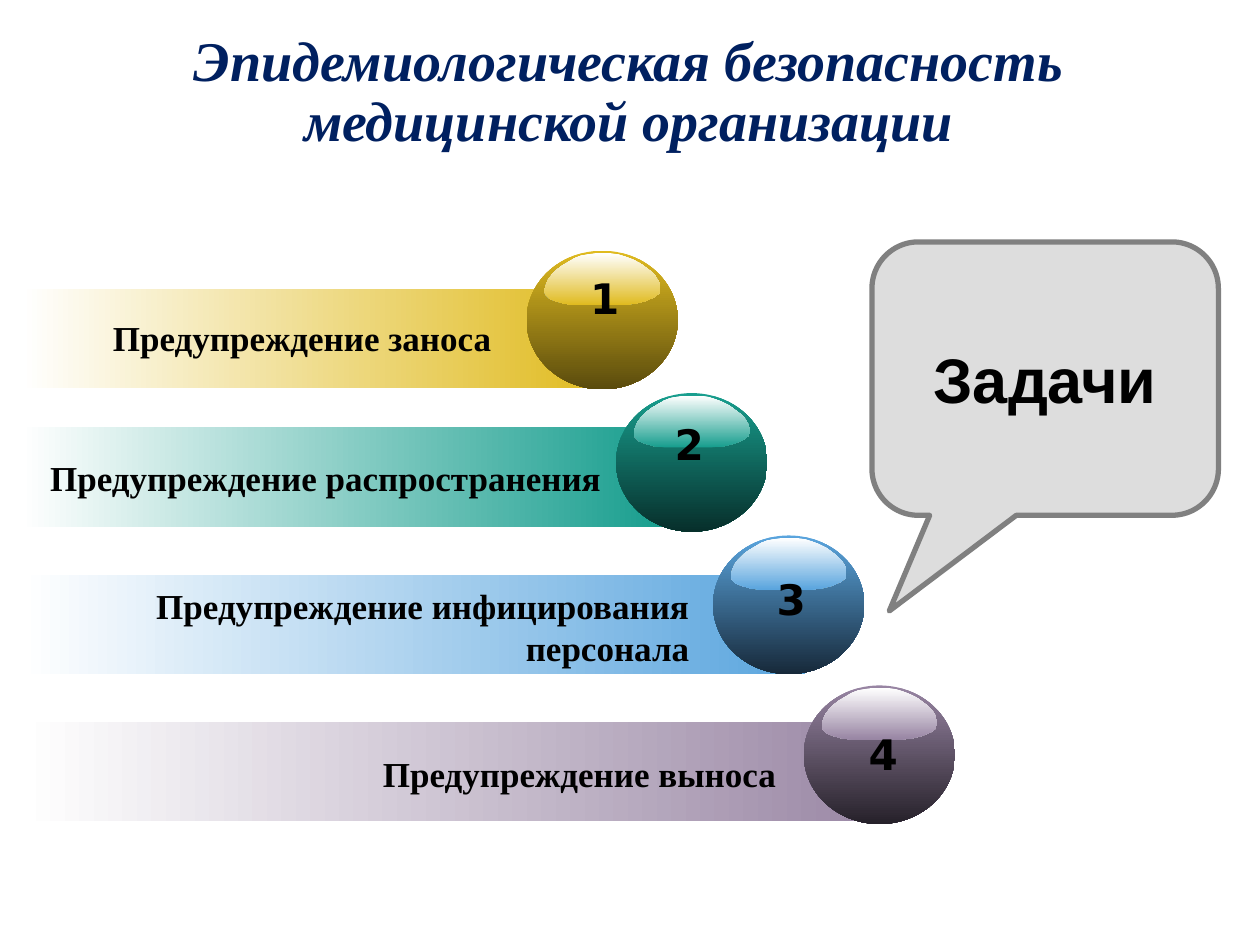
from dataclasses import dataclass
from pptx import Presentation
from pptx.dml.color import RGBColor
from pptx.enum.shapes import MSO_SHAPE
from pptx.enum.text import MSO_ANCHOR, MSO_AUTO_SIZE, PP_ALIGN
from pptx.util import Inches, Pt

RECT, OVAL = MSO_SHAPE.RECTANGLE, MSO_SHAPE.OVAL
CALLOUT = MSO_SHAPE.ROUNDED_RECTANGULAR_CALLOUT
MIDDLE = MSO_ANCHOR.MIDDLE
CENTER, RIGHT = PP_ALIGN.CENTER, PP_ALIGN.RIGHT
GROW = MSO_AUTO_SIZE.SHAPE_TO_FIT_TEXT
RIGHTWARD, DOWNWARD = 0, 270


@dataclass(frozen=True)
class Theme:
    white: str = "FFFFFF"
    black: str = "000000"
    navy: str = "002060"
    callout_fill: str = "DDDDDD"
    callout_line: str = "808080"
    serif: str = "Times New Roman"
    sans: str = "Arial"
    digits: str = "DejaVu Sans"
    task_size: int = 20
    number_size: int = 24
    title_size: int = 32
    callout_size: int = 36


theme = Theme()


def write(shape, text, align, font, size, color=theme.black, **formats):
    """Fill a shape with one bold paragraph; formats are paragraph attributes."""
    paragraph = shape.text_frame.paragraphs[0]
    paragraph.alignment = align
    for key, value in formats.items():
        setattr(paragraph, key, value)
    run = paragraph.add_run()
    run.text = text
    for key, value in {"name": font, "size": Pt(size), "bold": True}.items():
        setattr(run.font, key, value)
    run.font.color.rgb = RGBColor.from_string(color)
    return run


def paint(shape, start, end, angle):
    """Give a shape a two-colour gradient without outline or shadow."""
    shape.shadow.inherit = False
    shape.line.fill.background()
    shape.fill.gradient()
    shape.fill.gradient_angle = angle
    for stop, color in zip(shape.fill.gradient_stops, (start, end)):
        stop.color.rgb = RGBColor.from_string(color)


prs = Presentation()
prs.slide_width, prs.slide_height = Inches(10), Inches(7.5)
slide = prs.slides.add_slide(prs.slide_layouts[6])

# Highlight outline in hundredths of an inch from its own top left corner
GLOSS = [(91, 23), (92, 28), (91, 32), (87, 35), (80, 38), (72, 40), (62, 41),
         (55, 41), (33, 41), (24, 41), (16, 40), (9, 38), (4, 36), (1, 33),
         (0, 30), (1, 26), (3, 21), (6, 17), (10, 13), (14, 10), (19, 7),
         (24, 4), (29, 2), (34, 1), (40, 0), (46, 0), (53, 0), (59, 1),
         (65, 3), (70, 5), (76, 8), (80, 11), (84, 14), (88, 18)]
BAR_LEFT, BAR_HEIGHT = 0.17, 0.79
BALL_WIDTH, BALL_HEIGHT = 1.2, 1.1

# number, colour, shade, bar top, bar width, ball left, ball top, digit left, digit top
tasks = [
    ("4", "9885A3", "26212A", 5.73, 6.99, 6.38, 5.44, 6.79, 5.73),
    ("2", "189E8E", "072F2B", 3.39, 5.10, 4.89, 3.12, 5.25, 3.27),
    ("3", "5AA5DE", "17293A", 4.56, 6.22, 5.66, 4.25, 6.06, 4.50),
    ("1", "E0BB20", "5A4B0D", 2.29, 4.62, 4.18, 1.99, 4.58, 2.11),
]
for number, color, shade, bar_top, bar_width, ball_left, ball_top, digit_left, digit_top in tasks:
    task = slide.shapes.add_group_shape().shapes
    bar = task.add_shape(RECT, Inches(BAR_LEFT), Inches(bar_top),
                         Inches(bar_width), Inches(BAR_HEIGHT))
    paint(bar, theme.white, color, RIGHTWARD)
    ball = task.add_shape(OVAL, Inches(ball_left), Inches(ball_top),
                          Inches(BALL_WIDTH), Inches(BALL_HEIGHT))
    paint(ball, color, shade, DOWNWARD)
    outline = task.build_freeform(*GLOSS[0], scale=Inches(0.01))
    outline.add_line_segments(GLOSS[1:], close=True)
    gloss = outline.convert_to_shape(Inches(ball_left + 0.14), Inches(ball_top + 0.02))
    paint(gloss, theme.white, color, DOWNWARD)
    digit = task.add_textbox(Inches(digit_left), Inches(digit_top), Inches(0.44), Inches(0.5))
    digit.text_frame.word_wrap = False
    digit.text_frame.auto_size = GROW
    write(digit, number, CENTER, theme.digits, theme.number_size)

captions = [
    ("Предупреждение заноса", 0.5, 2.46, 3.5, 0.44),
    ("Предупреждение распространения", 0.28, 3.57, 4.59, 0.44),
    ("Предупреждение инфицирования персонала", 0.76, 4.59, 4.81, 0.77),
    ("Предупреждение выноса", 0.93, 5.92, 5.33, 0.44),
]
for text, *box in captions:
    caption = slide.shapes.add_textbox(*map(Inches, box))
    caption.text_frame.word_wrap = True
    caption.text_frame.auto_size = GROW
    write(caption, text, RIGHT, theme.serif, theme.task_size, space_after=Pt(12))

goals = slide.shapes.add_shape(CALLOUT, Inches(6.92), Inches(1.92), Inches(2.75), Inches(2.17))
for index, value in enumerate((-0.45, 0.85, 0.17)):
    goals.adjustments[index] = value
goals.shadow.inherit = False
goals.fill.solid()
goals.fill.fore_color.rgb = RGBColor.from_string(theme.callout_fill)
goals.line.color.rgb = RGBColor.from_string(theme.callout_line)
goals.line.width = Pt(3)
goals.text_frame.vertical_anchor = MIDDLE
write(goals, "Задачи", CENTER, theme.sans, theme.callout_size)

title = slide.shapes.add_textbox(Inches(0.68), Inches(0.13), Inches(8.62), Inches(1.22))
title.text_frame.word_wrap = True
title.text_frame.vertical_anchor = MIDDLE
heading = write(title, "Эпидемиологическая безопасность медицинской организации",
                CENTER, theme.serif, theme.title_size, theme.navy, line_spacing=0.9)
heading.font.italic = True

prs.save("out.pptx")
